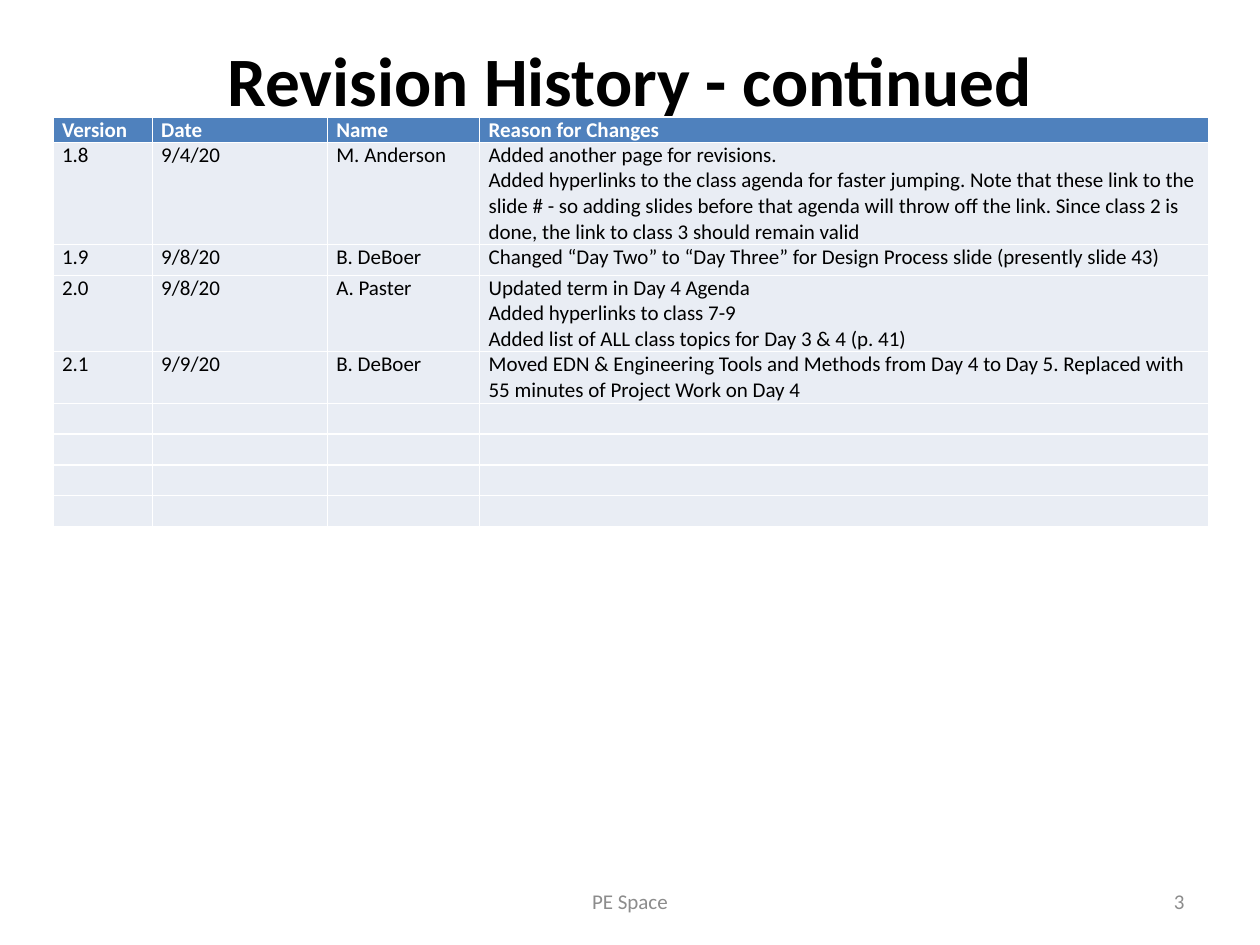
import dataclasses

import pptx
import pptx.dml.color
import pptx.enum.text
import pptx.oxml.ns
import pptx.util

Cm = pptx.util.Cm
Align = pptx.enum.text.PP_ALIGN
Anchor = pptx.enum.text.MSO_ANCHOR


@dataclasses.dataclass(frozen=True)
class Theme:
    font: str = "Calibri"
    ink: str = "000000"
    white: str = "FFFFFF"
    grey: str = "8C8C8C"
    head: str = "4F81BD"
    body: str = "E9EDF4"
    title: float = 39.6
    small: float = 12


THEME = Theme()
WIDTHS = (2, 3.53, 3.07, 14.7)
HEIGHTS = (0.5, 2.06, 0.62, 1.54, 1.04) + (0.62,) * 4
ROWS = (
    ("Version", "Date", "Name", "Reason for Changes"),
    ("1.8", "9/4/20", "M. Anderson",
     "Added another page for revisions.\v"
     "Added hyperlinks to the class agenda for faster jumping. Note that "
     "these link to the slide # - so adding slides before that agenda will "
     "throw off the link. Since class 2 is done, the link to class 3 should "
     "remain valid"),
    ("1.9", "9/8/20", "B. DeBoer",
     "Changed “Day Two” to “Day Three” for Design Process slide "
     "(presently slide 43)"),
    ("2.0", "9/8/20", "A. Paster",
     "Updated term in Day 4 Agenda\n"
     "Added hyperlinks to class 7-9\n"
     "Added list of ALL class topics for Day 3 & 4 (p. 41)"),
    ("2.1", "9/9/20", "B. DeBoer",
     "Moved EDN & Engineering Tools and Methods from Day 4 to Day 5. "
     "Replaced with 55 minutes of Project Work on Day 4"),
)


def color(code):
    return pptx.dml.color.RGBColor.from_string(code)


def style(para, size, code, bold=False):
    font = para.font
    font.name = THEME.font
    font.size = pptx.util.Pt(size)
    font.bold = bold
    font.color.rgb = color(code)


def add_text(slide, text, box, size, code, align, anchor=Anchor.MIDDLE,
             bold=False):
    frame = slide.shapes.add_textbox(*map(Cm, box)).text_frame
    frame.word_wrap = True
    frame.vertical_anchor = anchor
    frame.margin_top = frame.margin_bottom = 0
    frame.text = text
    para = frame.paragraphs[0]
    para.alignment = align
    style(para, size, code, bold)


def fill_cell(cell, text, head):
    cell.margin_left = cell.margin_right = Cm(0.18)
    cell.margin_top = cell.margin_bottom = 0
    cell.fill.solid()
    cell.fill.fore_color.rgb = color(THEME.head if head else THEME.body)
    cell.text = text
    for para in cell.text_frame.paragraphs:
        style(para, THEME.small, THEME.white if head else THEME.ink, head)
        if not text:
            # An empty cell takes its line height from the end mark.
            end = para._p.makeelement(pptx.oxml.ns.qn("a:endParaRPr"),
                                      {"sz": str(THEME.small * 100)})
            para._p.append(end)


def add_grid(slide, left, top):
    table = slide.shapes.add_table(
        len(HEIGHTS), len(WIDTHS), Cm(left), Cm(top),
        Cm(sum(WIDTHS)), Cm(sum(HEIGHTS))).table
    table.horz_banding = False
    for col, width in zip(table.columns, WIDTHS):
        col.width = Cm(width)
    for i, (row, height) in enumerate(zip(table.rows, HEIGHTS)):
        row.height = Cm(height)
        texts = ROWS[i] if i < len(ROWS) else ("",) * len(WIDTHS)
        for cell, text in zip(row.cells, texts):
            fill_cell(cell, text, i == 0)


def main():
    deck = pptx.Presentation()
    deck.slide_width, deck.slide_height = Cm(25.4), Cm(19.05)
    slide = deck.slides.add_slide(deck.slide_layouts[6])
    add_text(slide, "Revision History - continued", (1.27, 0.76, 22.86, 3.18),
             THEME.title, THEME.ink, Align.CENTER, Anchor.TOP, True)
    add_grid(slide, 1.07, 2.36)
    add_text(slide, "PE Space", (8.68, 17.65, 8.04, 1.02),
             THEME.small, THEME.grey, Align.CENTER)
    add_text(slide, "3", (18.2, 17.65, 5.93, 1.02),
             THEME.small, THEME.grey, Align.RIGHT)
    deck.save("out.pptx")


if __name__ == "__main__":
    main()
